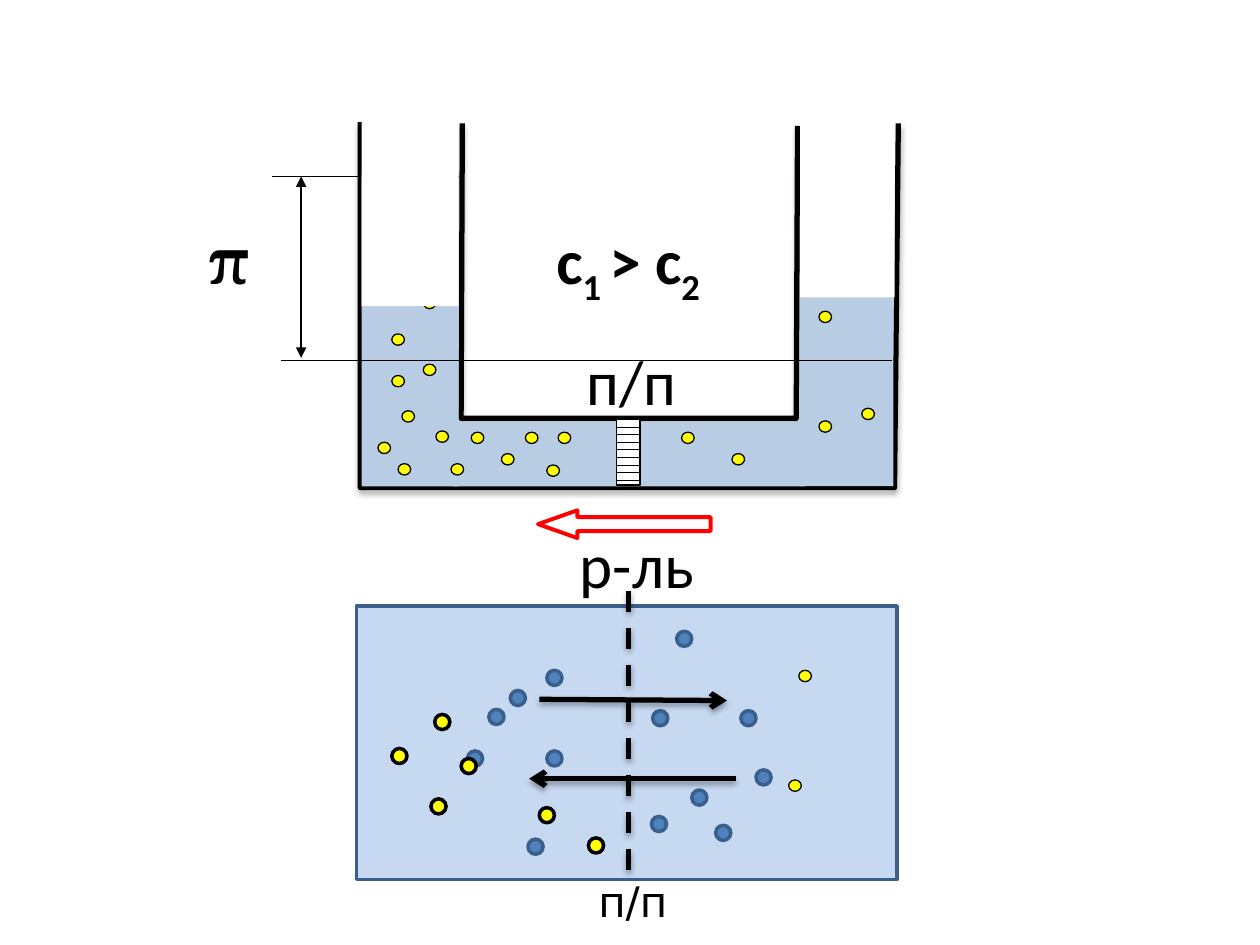
from dataclasses import dataclass

from lxml.etree import SubElement
from pptx import Presentation
from pptx.dml.color import RGBColor
from pptx.enum.dml import MSO_LINE, MSO_PATTERN
from pptx.enum.shapes import MSO_CONNECTOR, MSO_SHAPE
from pptx.enum.text import MSO_ANCHOR, PP_ALIGN
from pptx.oxml.ns import qn
from pptx.util import Cm, Pt

UNIT = 2.54  # centimetres per drawing unit
BLACK, WHITE, YELLOW, RED = "000000", "FFFFFF", "FFFF00", "FF0000"
WATER, PANEL, BLUE, NAVY = "B8CCE4", "C6D9F1", "4F81BD", "3A5F8C"


@dataclass
class Dots:
    width: float
    height: float
    fill: str
    line: str
    weight: float
    places: list[tuple[float, float]]


@dataclass
class Line:
    start: tuple[float, float]
    end: tuple[float, float]
    weight: float = 0.75
    head: str = ""
    tail: str = ""
    dashed: bool = False
    shadow: bool = False


@dataclass
class Label:
    box: tuple[float, float, float, float]
    runs: list[tuple[str, int]]  # text and baseline shift in percent
    font: str = "Calibri"
    size: int = 36
    bold: bool = False
    align: PP_ALIGN = PP_ALIGN.CENTER
    after: int = 10


SOLUTE = Dots(0.1, 0.09, YELLOW, BLACK, 0.75, [
    (3.36, 2.36), (3.11, 2.65), (3.11, 2.98), (3.19, 3.26), (3, 3.51),
    (6.5, 2.47), (3.98, 3.6), (3.36, 2.89), (6.34, 5.32), (6.84, 3.24),
    (6.5, 3.34), (5.41, 3.43), (5.81, 3.6), (4.43, 3.43), (6.26, 6.19),
    (3.74, 3.43), (3.58, 3.68), (3.46, 3.42), (4.17, 3.43), (4.34, 3.69),
    (3.16, 3.68)])
SOLVENT = Dots(0.12, 0.12, BLUE, NAVY, 2, [
    (3.88, 5.63), (5.68, 6.55), (5.88, 5.64), (5.49, 6.27), (3.71, 5.96),
    (4.34, 5.32), (4.19, 6.66), (4.34, 5.96), (5.17, 6.48), (5.18, 5.64),
    (5.37, 5.01), (4.05, 5.48), (6, 6.11)])
LARGE_SOLUTE = Dots(0.12, 0.12, YELLOW, BLACK, 2, [
    (3.42, 6.34), (4.28, 6.41), (3.66, 6.02), (3.45, 5.67), (4.67, 6.65),
    (3.11, 5.94)])

OUTER_WALL = [(2.86, 0.97), (2.86, 3.87), (7.1, 3.87), (7.13, 0.98)]
INNER_WALL = [(3.67, 0.98), (3.66, 3.32), (6.32, 3.32), (6.33, 1)]
LIQUID = [(2.87, 1.39, 0.77, 2.47), (6.35, 2.36, 0.74, 1.5),
          (3.6, 3.35, 2.79, 0.51)]
EMPTY_TUBES = [(2.87, 0, 0.77, 2.43), (6.35, 0, 0.75, 2.36)]

LEVELS = [Line((2.23, 2.86), (7.08, 2.86)),
          Line((2.16, 1.4), (3.64, 1.4)),
          Line((2.39, 1.4), (2.39, 2.84), head="triangle", tail="triangle")]
FLOWS = [Line((4.28, 5.55), (5.77, 5.56), 3, tail="arrow", shadow=True),
         Line((5.84, 6.18), (4.2, 6.18), 3, tail="arrow", shadow=True),
         Line((4.99, 4.69), (4.99, 6.96), 3, dashed=True, shadow=True)]

LABELS = [
    Label((1.46, 1.71, 0.71, 0.73), [("π", 0)], "Cambria", bold=True),
    Label((4.07, 1.71, 1.83, 0.85),
          [("c", 0), ("1 ", -25), ("> c", 0), ("2", -25)], bold=True),
    Label((3.99, 4.12, 2.13, 0.63), [("р-ль", 0)]),
    Label((4.29, 2.67, 1.44, 0.61), [("п/п", 0)]),
    Label((4.65, 6.9, 0.91, 0.47), [("п/п", 0)], "DejaVu Sans", 24,
          align=PP_ALIGN.LEFT, after=0)]


def u(*values: float) -> list[Cm]:
    return [Cm(v * UNIT) for v in values]


def color(hex_value: str) -> RGBColor:
    return RGBColor.from_string(hex_value)


def set_line(s, hex_value: str, weight: float) -> None:
    s.line.color.rgb = color(hex_value)
    s.line.width = Pt(weight)


def set_effects(s, shadow: bool) -> None:
    """Replace the theme shadow by a soft one or by none; call after set_line."""
    effects = SubElement(s._element.spPr, qn("a:effectLst"))
    if shadow:
        outer = SubElement(effects, qn("a:outerShdw"), blurRad="40000",
                           dist="23000", dir="5400000", rotWithShape="0")
        rgb = SubElement(outer, qn("a:srgbClr"), val=BLACK)
        SubElement(rgb, qn("a:alpha"), val="35000")


def add_shape(shapes, kind: MSO_SHAPE, box: tuple, fill: str,
              line: str = "", weight: float = 0.75):
    s = shapes.add_shape(kind, *u(*box))
    s.shadow.inherit = False
    s.fill.solid()
    s.fill.fore_color.rgb = color(fill)
    if line:
        set_line(s, line, weight)
    else:
        s.line.fill.background()
    return s


def add_wall(shapes, points: list[tuple[float, float]]) -> None:
    corners = [u(*point) for point in points]
    builder = shapes.build_freeform(*corners[0])
    builder.add_line_segments(corners[1:], close=False)
    s = builder.convert_to_shape()
    s.fill.background()
    set_line(s, BLACK, 3)
    set_effects(s, True)


def add_dots(shapes, dots: Dots) -> None:
    for place in dots.places:
        add_shape(shapes, MSO_SHAPE.OVAL, (*place, dots.width, dots.height),
                  dots.fill, dots.line, dots.weight)


def add_line(shapes, line: Line) -> None:
    s = shapes.add_connector(MSO_CONNECTOR.STRAIGHT,
                             *u(*line.start, *line.end))
    set_line(s, BLACK, line.weight)
    if line.dashed:
        s.line.dash_style = MSO_LINE.DASH
    for tag, arrow in (("a:headEnd", line.head), ("a:tailEnd", line.tail)):
        if arrow:
            SubElement(s.line._get_or_add_ln(), qn(tag), type=arrow)
    set_effects(s, line.shadow)


def add_label(shapes, label: Label) -> None:
    tf = shapes.add_textbox(*u(*label.box)).text_frame
    tf.word_wrap = True
    tf.vertical_anchor = MSO_ANCHOR.TOP
    p = tf.paragraphs[0]
    p.alignment = label.align
    p.space_after = Pt(label.after)
    style = {"name": label.font, "size": Pt(label.size), "bold": label.bold}
    for text, shift in label.runs:
        r = p.add_run()
        r.text = text
        for name, value in style.items():
            setattr(r.font, name, value)
        r.font.color.rgb = color(BLACK)
        if shift:
            r.font._element.set("baseline", str(shift * 1000))


def main() -> None:
    prs = Presentation()
    prs.slide_width, prs.slide_height = u(10, 7.5)
    shapes = prs.slides.add_slide(prs.slide_layouts[6]).shapes
    rect = MSO_SHAPE.RECTANGLE

    # Lower panel and the U-shaped vessel
    add_shape(shapes, rect, (2.83, 4.81, 4.29, 2.17), PANEL, NAVY, 2)
    for wall in (OUTER_WALL, INNER_WALL):
        add_wall(shapes, wall)
    for box in LIQUID:
        add_shape(shapes, rect, box, WATER)

    # Semipermeable membrane
    membrane = add_shape(shapes, rect, (4.89, 3.33, 0.19, 0.52), WHITE, BLACK)
    membrane.fill.patterned()
    membrane.fill.pattern = MSO_PATTERN.DASHED_HORIZONTAL
    membrane.fill.fore_color.rgb = color(BLACK)
    membrane.fill.back_color.rgb = color(WHITE)

    # Solute, liquid levels and the osmosis arrow
    add_dots(shapes, SOLUTE)
    for line in LEVELS:
        add_line(shapes, line)
    arrow = add_shape(shapes, MSO_SHAPE.LEFT_ARROW, (4.27, 4.05, 1.37, 0.22),
                      WHITE, RED, 2.25)
    arrow.adjustments[0], arrow.adjustments[1] = 0.5, 1.42

    # Labels and the empty upper tubes
    for label in LABELS:
        add_label(shapes, label)
    for box in EMPTY_TUBES:
        add_shape(shapes, rect, box, WHITE)

    # Particles and flows in the lower panel
    add_dots(shapes, SOLVENT)
    for line in FLOWS:
        add_line(shapes, line)
    add_dots(shapes, LARGE_SOLUTE)

    prs.save("out.pptx")


if __name__ == "__main__":
    main()
